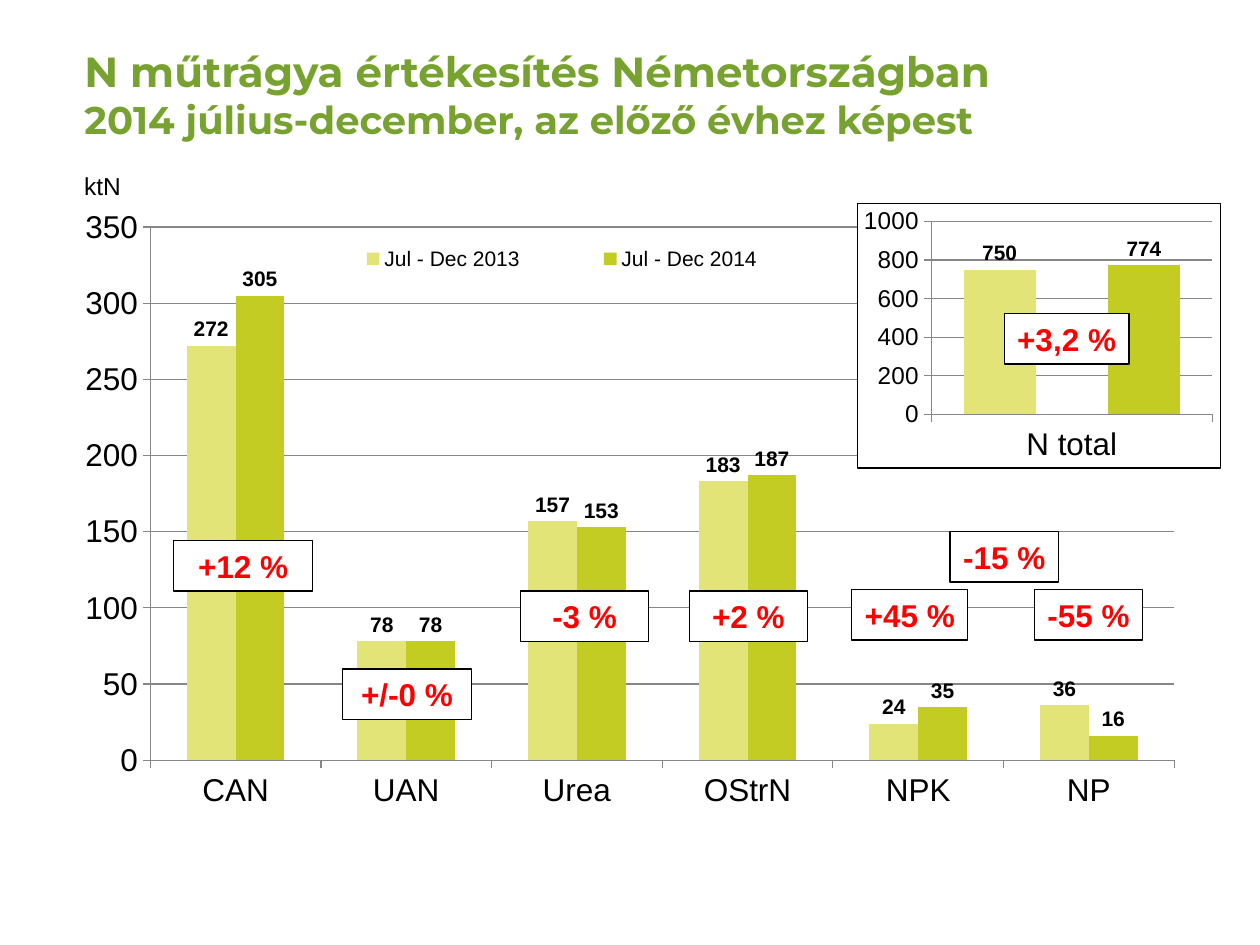
"""Build the slide on nitrogen fertiliser sales in Germany."""
from lxml import etree
from pptx import Presentation
from pptx.chart.data import CategoryChartData
from pptx.dml.color import RGBColor
from pptx.enum import chart as ce, shapes, text
from pptx.oxml import parse_xml
from pptx.oxml.ns import nsdecls, qn
from pptx.util import Inches, Pt

HUES = {"title": "78A22F", "old": "E2E477", "new": "C2CC23", "text": "000000",
        "change": "FF0000", "paper": "FFFFFF", "grid": "868686"}
TITLE = [("N műtrágya értékesítés Németországban", 24),
         ("2014 július-december, az előző évhez képest", 22)]
MAIN = {"at": (0.5, 1.56, 9, 4.95), "plot": (0.077, 0.049, 0.903, 0.855),
        "cats": ["CAN", "UAN", "Urea", "OStrN", "NPK", "NP"],
        "series": [("Jul - Dec 2013", [272, 78, 157, 183, 24, 36]),
                   ("Jul - Dec 2014", [305, 78, 153, 187, 35, 16])],
        "top": 350, "step": 50, "size": 18, "gap": 150, "lap": 0}
TOTAL = {"at": (6.8, 1.61, 2.89, 2.11), "plot": (0.204, 0.068, 0.774, 0.73),
         "cats": ["N total"],
         "series": [("Series 1", [750]), ("Series 2", [774])],
         "top": 1000, "step": 200, "size": 14, "gap": 89, "lap": -100}
LEGEND = (0.2, 0.07, 0.48, 0.06)
CHANGES = [("+12 %", 1.38, 4.29, 1.1), ("+/-0 %", 2.72, 5.31, 1.02),
           ("-3 %", 4.13, 4.69, 1.02), ("+2 %", 5.47, 4.69, 0.94),
           ("+45 %", 6.76, 4.68, 0.92), ("-55 %", 8.21, 4.68, 0.86),
           ("+3,2 %", 7.97, 2.49, 0.99), ("-15 %", 7.54, 4.22, 0.86)]


def hue(name):
    return RGBColor.from_string(HUES[name])


def style(font, size, color="text", bold=False, face="Arial"):
    font.size, font.bold, font.name = Pt(size), bold, face
    font.color.rgb = hue(color)


def place(part, index, box, inner=False):
    for old in part.findall(qn("c:layout")):
        part.remove(old)
    layout = etree.Element(qn("c:layout"))
    manual = etree.SubElement(layout, qn("c:manualLayout"))
    pairs = [("layoutTarget", "inner")] if inner else []
    pairs += [("xMode", "edge"), ("yMode", "edge"), *zip("xywh", box)]
    for tag, val in pairs:
        etree.SubElement(manual, qn("c:" + tag)).set("val", str(val))
    part.insert(index, layout)


def draw(slide, info):
    data = CategoryChartData()
    data.categories = info["cats"]
    for name, vals in info["series"]:
        data.add_series(name, vals)
    chart = slide.shapes.add_chart(ce.XL_CHART_TYPE.COLUMN_CLUSTERED,
                                   *map(Inches, info["at"]), data).chart
    chart.has_title = chart.has_legend = False
    style(chart.font, 18)
    plot = chart.plots[0]
    plot.vary_by_categories = False
    plot.gap_width, plot.overlap = info["gap"], info["lap"]
    for series, color in zip(plot.series, ("old", "new")):
        series.format.fill.solid()
        series.format.fill.fore_color.rgb = hue(color)
        labels = series.data_labels
        labels.show_value = True
        labels.number_format, labels.number_format_is_linked = "#,##0", False
        labels.position = ce.XL_LABEL_POSITION.OUTSIDE_END
        style(labels.font, 12, bold=True)
    axis = chart.value_axis
    axis.minimum_scale, axis.maximum_scale = 0, info["top"]
    axis.major_unit = info["step"]
    axis.tick_labels.number_format = "0"
    axis.tick_labels.number_format_is_linked = False
    style(axis.tick_labels.font, info["size"])
    style(chart.category_axis.tick_labels.font, 18)
    for item in (axis, chart.category_axis):
        item.major_tick_mark = ce.XL_TICK_MARK.OUTSIDE
        item.format.line.color.rgb = hue("grid")
    axis.major_gridlines.format.line.color.rgb = hue("grid")
    place(chart._chartSpace.chart.plotArea, 0, info["plot"], True)
    return chart


def add_legend(chart):
    chart.has_legend = True
    legend = chart.legend
    legend.position = ce.XL_LEGEND_POSITION.TOP
    legend.include_in_layout = True
    style(legend.font, 12)
    place(legend._element, 1, LEGEND)


def add_frame(chart):
    frame = parse_xml(
        f'<c:spPr {nsdecls("c", "a")}><a:solidFill><a:srgbClr val="{HUES["paper"]}"/>'
        f'</a:solidFill><a:ln w="9525"><a:solidFill><a:srgbClr val="{HUES["text"]}"/>'
        '</a:solidFill></a:ln></c:spPr>')
    chart._chartSpace.chart.addnext(frame)


def add_change(slide, words, left, top, width):
    box = slide.shapes.add_shape(shapes.MSO_SHAPE.RECTANGLE,
                                 *map(Inches, (left, top, width, 0.4)))
    box.shadow.inherit = False
    box.fill.solid()
    box.fill.fore_color.rgb = hue("paper")
    box.line.color.rgb, box.line.width = hue("text"), Pt(0.75)
    frame = box.text_frame
    frame.text, frame.word_wrap = words, False
    frame.auto_size = text.MSO_AUTO_SIZE.SHAPE_TO_FIT_TEXT
    para = frame.paragraphs[0]
    para.alignment = text.PP_ALIGN.CENTER
    style(para.runs[0].font, 18, "change", True)


def add_title(slide):
    title = slide.shapes.title
    title.left, title.top, title.width, title.height = map(
        Inches, (0.57, 0.28, 8.66, 0.93))
    frame = title.text_frame
    frame.text = "\v".join(words for words, _ in TITLE)
    frame.vertical_anchor = text.MSO_ANCHOR.MIDDLE
    para = frame.paragraphs[0]
    para.alignment = text.PP_ALIGN.LEFT
    for run, (_, size) in zip(para.runs, TITLE):
        style(run.font, size, "title", True, "Montserrat")


def add_unit(slide):
    box = slide.shapes.add_textbox(*map(Inches, (0.57, 1.31, 0.5, 0.34)))
    box.text_frame.text = "ktN"
    box.text_frame.word_wrap = False
    style(box.text_frame.paragraphs[0].runs[0].font, 14)


def main():
    deck = Presentation()
    deck.slide_width, deck.slide_height = Inches(10), Inches(7.5)
    slide = deck.slides.add_slide(deck.slide_layouts[5])
    add_title(slide)
    add_legend(draw(slide, MAIN))
    add_frame(draw(slide, TOTAL))
    for change in CHANGES:
        add_change(slide, *change)
    add_unit(slide)
    deck.save("out.pptx")


if __name__ == "__main__":
    main()
